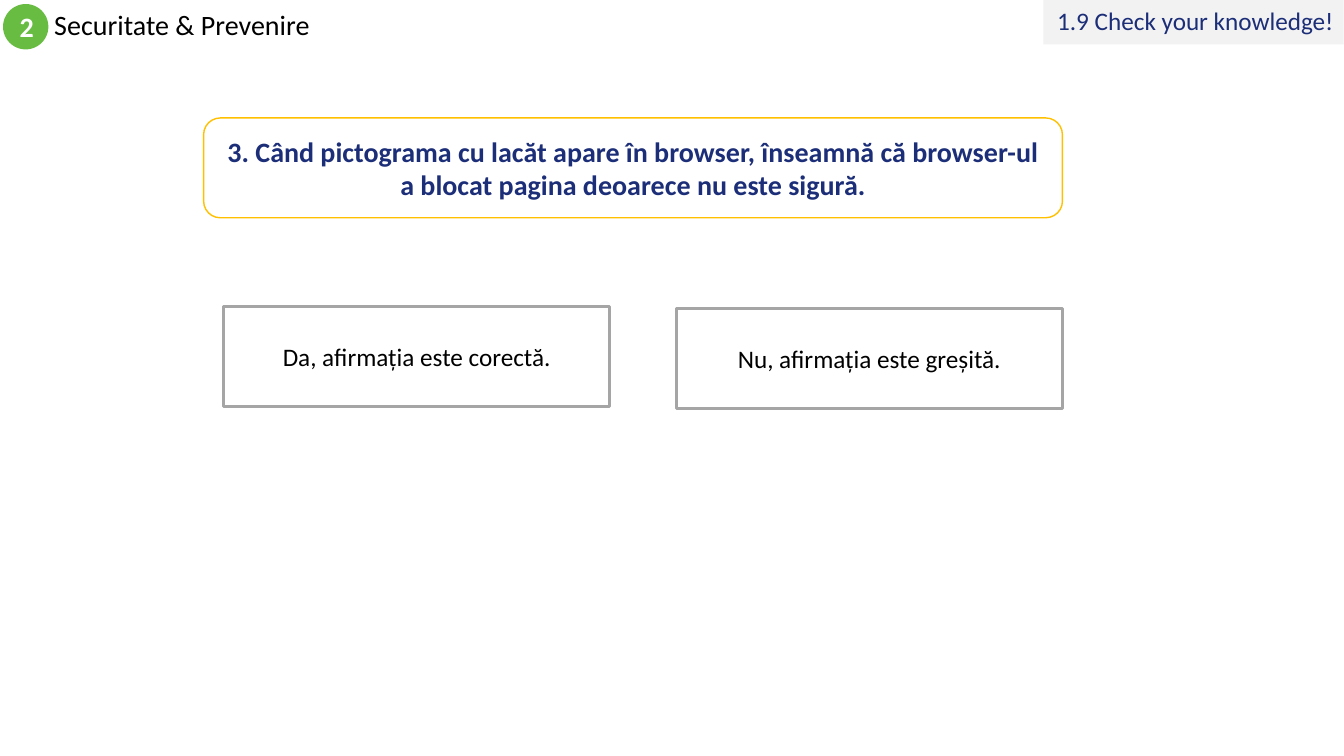
from pptx import Presentation
from pptx.dml.color import RGBColor
from pptx.enum.shapes import MSO_SHAPE
from pptx.enum.text import MSO_ANCHOR, PP_ALIGN
from pptx.util import Pt

RECTANGLE = MSO_SHAPE.RECTANGLE
ROUNDED = MSO_SHAPE.ROUNDED_RECTANGLE
OVAL = MSO_SHAPE.OVAL
MIDDLE = MSO_ANCHOR.MIDDLE
LEFT, CENTER, RIGHT = PP_ALIGN.LEFT, PP_ALIGN.CENTER, PP_ALIGN.RIGHT

FONT = "Calibri"
COLORS = {
    "white": "FFFFFF",
    "black": "000000",
    "navy": "1C2E78",
    "green": "68BC42",
    "amber": "FFC000",
    "grey": "A5A5A5",
    "pale": "F2F2F2",
}

ANSWERS = [
    ("Da, afirmația este corectă.", 159.84, 218.88),
    ("Nu, afirmația este greșită.", 483.12, 220.32),
]
ANSWER_SIZE = (275.76, 71.28)


def rgb(name):
    return RGBColor.from_string(COLORS[name])


def write(holder, text, size=18, color="black", bold=False, align=CENTER, spacing=None):
    frame = holder.text_frame
    frame.word_wrap = True
    frame.vertical_anchor = MIDDLE
    paragraph = frame.paragraphs[0]
    paragraph.alignment = align
    if spacing:
        paragraph.line_spacing = spacing
    run = paragraph.add_run()
    run.text = text
    run.font.name = FONT
    run.font.size = Pt(size)
    run.font.bold = bold
    run.font.color.rgb = rgb(color)


def add_panel(slide, kind, box, fill, line=None, line_width=1):
    panel = slide.shapes.add_shape(kind, *map(Pt, box))
    panel.shadow.inherit = False
    panel.fill.solid()
    panel.fill.fore_color.rgb = rgb(fill)
    if line:
        panel.line.color.rgb = rgb(line)
        panel.line.width = Pt(line_width)
    else:
        panel.line.fill.background()
    return panel


def add_header(slide):
    chapter = slide.shapes.add_textbox(Pt(31.68), Pt(2.88), Pt(576), Pt(32.4))
    write(chapter, "Securitate & Prevenire", size=20, align=LEFT, spacing=0.9)
    badge = add_panel(slide, OVAL, (2.16, 2.88, 32.4, 32.4), "green")
    write(badge, "2", size=20, color="white", bold=True)
    section = add_panel(slide, RECTANGLE, (745.2, 0, 214.56, 31.68), "pale")
    write(section, "1.9 Check your knowledge! ", color="navy", align=RIGHT, spacing=0.9)


def add_question(slide, text):
    question = add_panel(slide, ROUNDED, (145.44, 84.24, 613.44, 71.28), "white", "amber")
    write(question, text, size=20, color="navy", bold=True)


def add_answer(slide, text, left, top):
    answer = add_panel(slide, RECTANGLE, (left, top, *ANSWER_SIZE), "white", "grey", 2)
    write(answer, text)


def main():
    deck = Presentation()
    deck.slide_width, deck.slide_height = Pt(960), Pt(540)
    slide = deck.slides.add_slide(deck.slide_layouts[6])
    add_header(slide)
    add_question(
        slide,
        "3. Când pictograma cu lacăt apare în browser, înseamnă că browser-ul "
        "a blocat pagina deoarece nu este sigură.",
    )
    for text, left, top in ANSWERS:
        add_answer(slide, text, left, top)
    deck.save("out.pptx")


if __name__ == "__main__":
    main()
